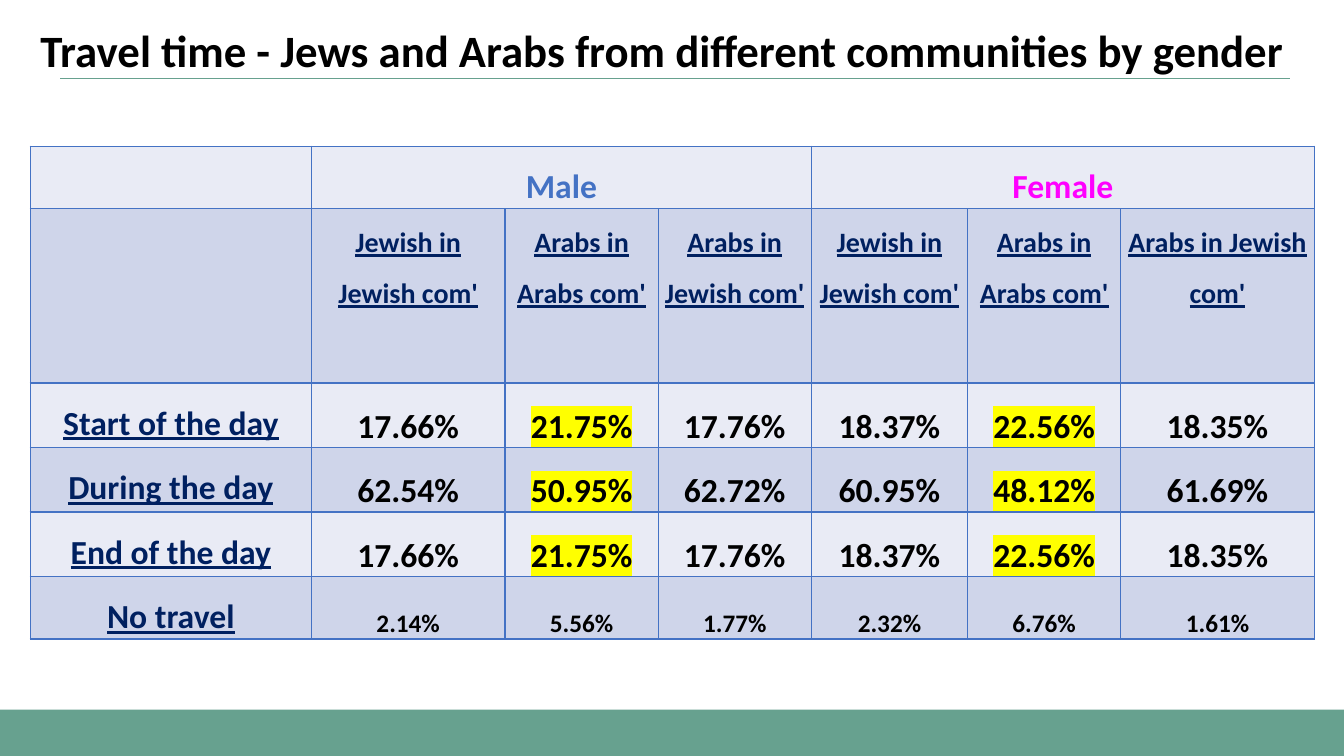
"""Build the travel time slide with a table of shares by gender and community."""
import pptx
import pptx.util
import pptx.dml.color
import pptx.enum.shapes
import pptx.enum.text
import pptx.oxml
import lxml.etree

Pt = pptx.util.Pt
ALIGN = pptx.enum.text.PP_ALIGN
ANCHOR = pptx.enum.text.MSO_ANCHOR
NS = "http://schemas.openxmlformats.org/drawingml/2006/main"
UNIT = pptx.util.Inches(0.1)
GREEN, NAVY, BLUE, BLACK = "67A18F", "002060", "4472C4", "000000"
BANDS = ["E9EBF5", "CFD5EA"]


def hue(text):
    return pptx.dml.color.RGBColor.from_string(text)


def write(frame, text, color, para, look):
    line = frame.paragraphs[0]
    for key, value in para.items():
        setattr(line, key, value)
    run = line.add_run()
    run.text = text
    for key, value in look.items():
        setattr(run.font, key, value)
    run.font.color.rgb = hue(color)
    return run


deck = pptx.Presentation()
deck.slide_width, deck.slide_height = int(133.33 * UNIT), 75 * UNIT
slide = deck.slides.add_slide(deck.slide_layouts[5])
shapes = slide.shapes
base = {"name": "Calibri", "bold": True}

foot = shapes.add_shape(pptx.enum.shapes.MSO_SHAPE.RECTANGLE,
                        0, int(70.4 * UNIT), deck.slide_width, int(4.6 * UNIT))
foot.shadow.inherit = False
foot.fill.solid()
foot.fill.fore_color.rgb = hue(GREEN)
foot.line.fill.background()

rule = shapes.add_connector(pptx.enum.shapes.MSO_CONNECTOR.STRAIGHT,
                            *[int(n * UNIT) for n in (6, 7.8, 128, 7.8)])
rule.line.color.rgb = hue(GREEN)
rule.line.width = Pt(0.5)
lxml.etree.SubElement(rule._element.spPr, f"{{{NS}}}effectLst")

title = shapes.title
for key, n in {"left": 3, "top": 2.4, "width": 127.3, "height": 10.4}.items():
    setattr(title, key, int(n * UNIT))
frame = title.text_frame
for key, value in {"word_wrap": True, "vertical_anchor": ANCHOR.TOP,
                   "auto_size": pptx.enum.text.MSO_AUTO_SIZE.NONE}.items():
    setattr(frame, key, value)
write(frame, "Travel time - Jews and Arabs from different communities by gender", BLACK,
      {"alignment": ALIGN.LEFT, "line_spacing": 0.9}, {**base, "size": Pt(32)})

groups = ["Jewish in Jewish com'", "Arabs in Arabs com'", "Arabs in Jewish com'"]
rows = [
    ["", "Male", "", "", "Female", "", ""],
    ["", *groups, *groups],
    ["Start of the day", "17.66%", "21.75%", "17.76%", "18.37%", "22.56%", "18.35%"],
    ["During the day", "62.54%", "50.95%", "62.72%", "60.95%", "48.12%", "61.69%"],
    ["End of the day", "17.66%", "21.75%", "17.76%", "18.37%", "22.56%", "18.35%"],
    ["No travel", "2.14%", "5.56%", "1.77%", "2.32%", "6.76%", "1.61%"],
]
wide = [27.9, 19.2, 15.2, 15.2, 15.5, 15.2, 19.2]
high = [6.2, 17.3, 6.4, 6.4, 6.4, 6.2]
table = shapes.add_table(len(rows), len(wide), 3 * UNIT, int(14.5 * UNIT),
                         int(sum(wide) * UNIT), int(sum(high) * UNIT)).table
table.first_row = False
for col, n in zip(table.columns, wide):
    col.width = int(n * UNIT)
for row, n in zip(table.rows, high):
    row.height = int(n * UNIT)

center = {"alignment": ALIGN.CENTER, "line_spacing": 1.5, "space_after": Pt(6)}
inset = {"margin_left": 0.6, "margin_right": 0.6, "margin_top": 0, "margin_bottom": 0}
for r, row in enumerate(rows):
    for c, text in enumerate(row):
        cell = table.cell(r, c)
        for side in "LRTB":
            cell._tc.get_or_add_tcPr().append(pptx.oxml.parse_xml(
                f'<a:ln{side} xmlns:a="{NS}" w="12700"><a:solidFill>'
                f'<a:srgbClr val="{BLUE}"/></a:solidFill></a:ln{side}>'))
        cell.fill.solid()
        cell.fill.fore_color.rgb = hue(BANDS[r % 2])
        if not text:
            continue
        for key, n in inset.items():
            setattr(cell, key, int(n * UNIT))
        value = r > 1 and c > 0
        cell.vertical_anchor = ANCHOR.BOTTOM if value else ANCHOR.TOP
        size = 20 if r == 1 else 18 if value and r == 5 else 24
        color = BLACK if value else NAVY if r else BLUE if c == 1 else "FF00FF"
        look = {**base, "size": Pt(size), "underline": r > 0 and not value}
        run = write(cell.text_frame, text, color, center, look)
        if c in (2, 5) and r in (2, 3, 4):
            fill = run._r.rPr.find(f"{{{NS}}}solidFill")
            fill.addnext(pptx.oxml.parse_xml(
                f'<a:highlight xmlns:a="{NS}"><a:srgbClr val="FFFF00"/></a:highlight>'))
for c in (1, 4):
    table.cell(0, c).merge(table.cell(0, c + 2))

deck.save("out.pptx")
